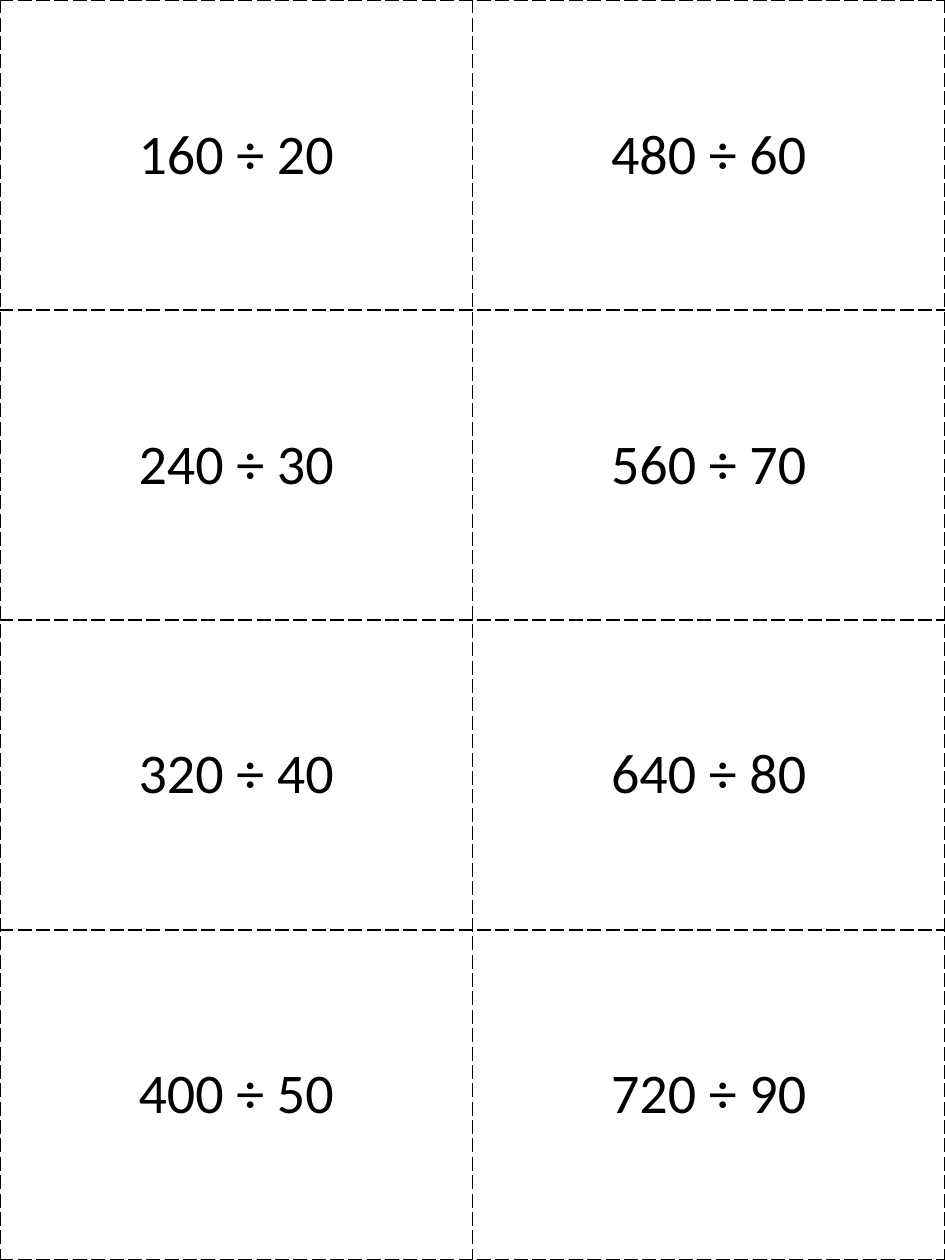
import pptx
import pptx.dml.color
import pptx.enum.text
import pptx.oxml.ns
import pptx.util
from lxml import etree

WIDTH, HEIGHT = 7.5, 10
COLUMNS, ROWS = 2, 4
ROW_HEIGHT = 2.46
QUOTIENT = 8
FIRST_DIVISOR = 20
INK = "000000"


def color(value):
    return pptx.dml.color.RGBColor.from_string(value)


def add_cell_borders(cell, width=1, ink=INK, dash="lgDash"):
    properties = cell._tc.get_or_add_tcPr()
    name = pptx.oxml.ns.qn
    for side in ("lnL", "lnR", "lnT", "lnB"):
        line = etree.SubElement(properties, name("a:" + side), w=str(pptx.util.Pt(width)))
        fill = etree.SubElement(line, name("a:solidFill"))
        etree.SubElement(fill, name("a:srgbClr"), val=ink)
        etree.SubElement(line, name("a:prstDash"), val=dash)


def write_text(cell, text, size=32, font="Calibri", ink=INK):
    cell.vertical_anchor = pptx.enum.text.MSO_ANCHOR.MIDDLE
    para = cell.text_frame.paragraphs[0]
    para.alignment = pptx.enum.text.PP_ALIGN.CENTER
    span = para.add_run()
    span.text = text
    span.font.size = pptx.util.Pt(size)
    span.font.name = font
    span.font.bold = False
    span.font.color.rgb = color(ink)


def add_card_table(page):
    inches = pptx.util.Inches
    table = page.shapes.add_table(ROWS, COLUMNS, 0, 0, inches(WIDTH), inches(HEIGHT)).table
    table.first_row = False
    table.horz_banding = False
    for column in table.columns:
        column.width = inches(WIDTH / COLUMNS)
    for row in table.rows:
        row.height = inches(ROW_HEIGHT)
    table.rows[ROWS - 1].height = inches(HEIGHT - ROW_HEIGHT * (ROWS - 1))
    return table


def fill_cards(table):
    for index in range(ROWS * COLUMNS):
        column, row = divmod(index, ROWS)
        divisor = FIRST_DIVISOR + 10 * index
        cell = table.cell(row, column)
        add_cell_borders(cell)
        cell.fill.background()
        write_text(cell, f"{QUOTIENT * divisor} ÷ {divisor}")


def main():
    deck = pptx.Presentation()
    deck.slide_width = pptx.util.Inches(WIDTH)
    deck.slide_height = pptx.util.Inches(HEIGHT)
    page = deck.slides.add_slide(deck.slide_layouts[6])
    fill_cards(add_card_table(page))
    deck.save("out.pptx")


if __name__ == "__main__":
    main()
